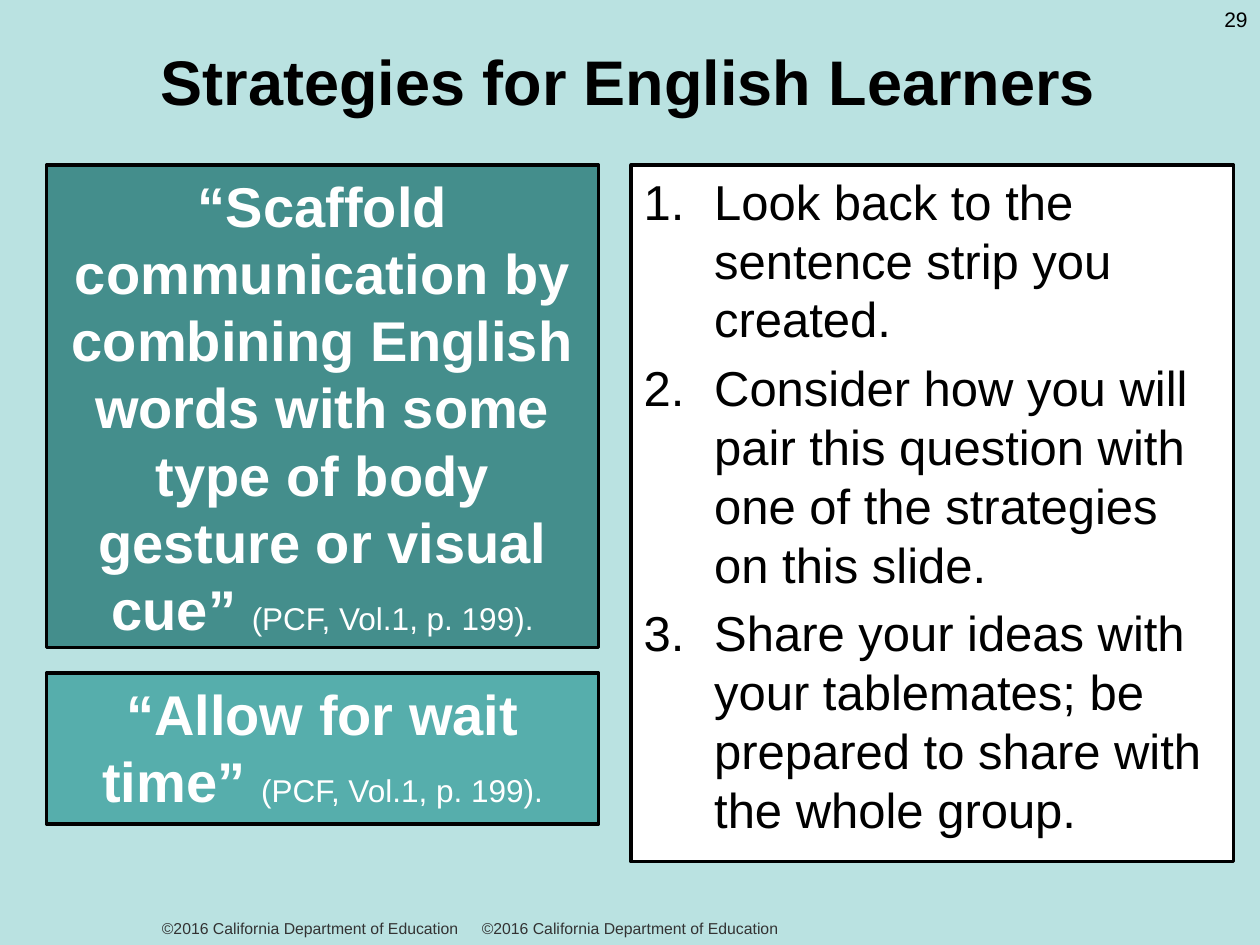
from lxml.etree import SubElement
from pptx import Presentation
from pptx.dml.color import RGBColor
from pptx.enum.shapes import MSO_SHAPE
from pptx.enum.text import MSO_ANCHOR, PP_ALIGN
from pptx.oxml.ns import qn
from pptx.util import Inches, Pt

COLORS = {"page": "BAE2E1", "black": "000000", "white": "FFFFFF",
          "gray": "333333", "dark teal": "448E8C", "light teal": "56AEAC"}
TITLE = "Strategies for English Learners"
CITATION = "(PCF, Vol.1, p. 199)."
COPYRIGHT = "©2016 California Department of Education"
PAGE_NUMBER = "29"
TOP, LEFT, LEFT_WIDTH = 1.31, 0.37, 4.38
STRATEGIES = [
    ("“Scaffold communication by combining English words with some type "
     "of body gesture or visual cue” ", TOP, 3.83, "dark teal"),
    ("“Allow for wait time” ", 5.34, 1.2, "light teal"),
]
STEPS = [
    "Look back to the sentence strip you created.",
    "Consider how you will pair this question with one of the strategies on this slide.",
    "Share your ideas with your tablemates; be prepared to share with the whole group.",
]
FOOTER_WIDTHS = [10, 4.92]


def color(name):
    return RGBColor.from_string(COLORS[name])


def add_span(para, text, size, ink="black", bold=False):
    span = para.add_run()
    span.text = text
    span.font.name = "Arial"
    span.font.size = Pt(size)
    span.font.bold = bold
    span.font.color.rgb = color(ink)


def add_label(page, text, place, size, ink="black", align=PP_ALIGN.CENTER,
              anchor=MSO_ANCHOR.MIDDLE):
    box = page.shapes.add_textbox(*map(Inches, place))
    box.text_frame.word_wrap = True
    box.text_frame.vertical_anchor = anchor
    para = box.text_frame.paragraphs[0]
    para.alignment = align
    add_span(para, text, size, ink)


def add_panel(page, place, fill):
    panel = page.shapes.add_shape(MSO_SHAPE.RECTANGLE, *map(Inches, place))
    panel.shadow.inherit = False
    panel.fill.solid()
    panel.fill.fore_color.rgb = color(fill)
    panel.line.color.rgb = color("black")
    panel.line.width = Pt(2)
    panel.text_frame.word_wrap = True
    panel.text_frame.vertical_anchor = MSO_ANCHOR.TOP
    return panel.text_frame


def number_paragraph(para, indent):
    properties = para._p.get_or_add_pPr()
    properties.set("marL", str(Inches(indent)))
    properties.set("indent", str(-Inches(indent)))
    SubElement(properties, qn("a:buFont"), typeface="+mj-lt")
    SubElement(properties, qn("a:buAutoNum"), type="arabicPeriod")


deck = Presentation()
deck.slide_width, deck.slide_height = Inches(10), Inches(7.5)
page = deck.slides.add_slide(deck.slide_layouts[5])
page.background.fill.solid()
page.background.fill.fore_color.rgb = color("page")

title = page.shapes.title
title.left, title.top, title.width, title.height = map(Inches, (-0.01, 0.01, 9.99, 1.25))
title.text_frame.vertical_anchor = MSO_ANCHOR.MIDDLE
title_para = title.text_frame.paragraphs[0]
title_para.alignment = PP_ALIGN.CENTER
add_span(title_para, TITLE, 36, bold=True)

steps_frame = add_panel(page, (5.01, TOP, 4.78, 5.53), "white")
for index, step in enumerate(STEPS):
    para = steps_frame.add_paragraph() if index else steps_frame.paragraphs[0]
    para.alignment = PP_ALIGN.LEFT
    para.space_before = Pt(5.6 if index else 0)
    number_paragraph(para, 0.56)
    add_span(para, step, 28)

for quote, top, height, fill in STRATEGIES:
    para = add_panel(page, (LEFT, top, LEFT_WIDTH, height), fill).paragraphs[0]
    para.alignment = PP_ALIGN.CENTER
    add_span(para, quote, 32, "white", bold=True)
    add_span(para, CITATION, 18, "white")

add_label(page, PAGE_NUMBER, (9.25, 0, 0.75, 0.3), 12,
          align=PP_ALIGN.RIGHT, anchor=MSO_ANCHOR.TOP)
for width in FOOTER_WIDTHS:
    add_label(page, COPYRIGHT, (0, 7.24, width, 0.25), 9, "gray")

deck.save("out.pptx")
